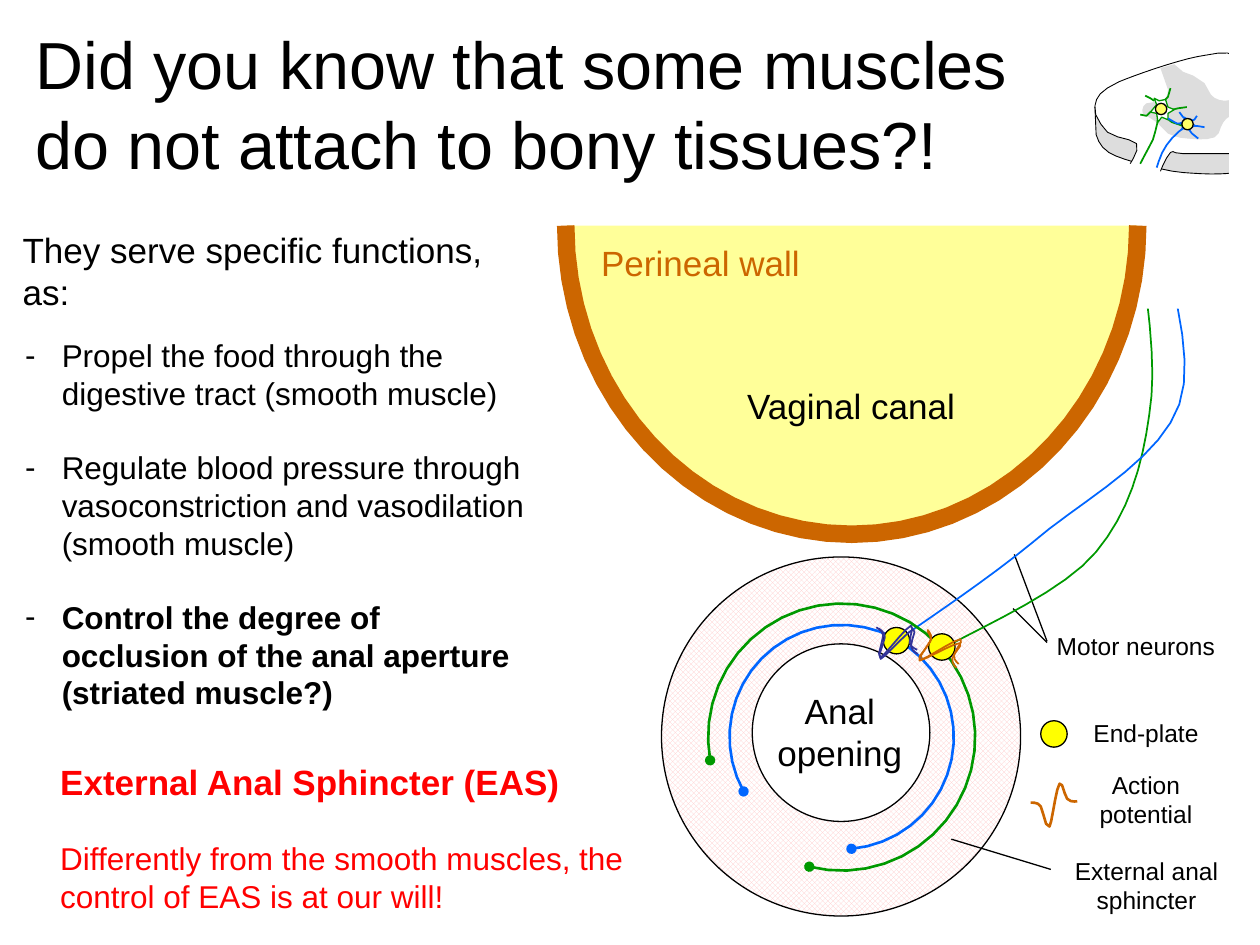
from math import cos, sin, radians, hypot
from pptx import Presentation
from pptx.util import Inches, Pt
from pptx.dml.color import RGBColor
from pptx.enum.dml import MSO_PATTERN
from pptx.enum.shapes import MSO_SHAPE as SHAPE, MSO_CONNECTOR as LINK
from pptx.enum.text import PP_ALIGN as ALIGN, MSO_ANCHOR as ANCHOR, MSO_AUTO_SIZE as AUTO
from pptx.oxml.ns import qn
from lxml.etree import SubElement

BLACK, WHITE, RED, GREY = "000000", "FFFFFF", "FF0000", "DDDDDD"
GREEN, BLUE, BROWN, PURPLE = "009900", "0066FF", "CC6600", "333399"
YELLOW, PALE, CREAM = "FFFF00", "FFFF66", "FFFF99"

TITLE = "Did you know that some muscles do not attach to bony tissues?!"
INTRO = "They serve specific functions, as:"
ROLES = [
    ("Propel the food through the digestive tract (smooth muscle)", False),
    ("Regulate blood pressure through vasoconstriction and vasodilation (smooth muscle)", False),
    ("Control the degree of occlusion of the anal aperture (striated muscle?)", True),
]
CLOSING = [
    ("External Anal Sphincter (EAS)", 20, True),
    ("Differently from the smooth muscles, the control of EAS is at our will!", 18, False),
]
KEYS = [
    ("Motor neurons", (8.34, 5.01, 1.35, 0.23)),
    ("End-plate", (8.42, 5.7, 1.35, 0.23)),
    ("Action potential", (8.5, 6.11, 1.19, 0.47)),
    ("External anal sphincter", (8.43, 6.79, 1.34, 0.47)),
]
LEADERS = [
    ((7.55, 6.66), (8.34, 6.9)),
    ((8.31, 5.09), (8.05, 4.4)),
    ((8.31, 5.1), (8.04, 4.83)),
]
NERVES = [
    (GREEN, [(8.99, 1.57), (9.02, 1.84, 9.18, 2.67, 9.14, 3.14),
             (9.09, 3.61, 8.99, 4.03, 8.7, 4.38), (8.42, 4.72, 7.68, 5.02, 7.41, 5.19)]),
    (BLUE, [(9.14, 1.61), (9.18, 1.88, 9.52, 2.76, 9.36, 3.21),
            (9.2, 3.66, 8.57, 3.98, 8.19, 4.31), (7.8, 4.63, 7.28, 4.97, 7.04, 5.14)]),
]
CORD = [
    (GREY, BLACK, [
        (9.08, 1.31), (8.98, 1.28, 8.86, 1.25, 8.8, 1.21), (8.74, 1.17, 8.72, 1.13, 8.7, 1.07),
        (8.69, 0.85), (8.75, 0.82), (8.89, 0.8), (9.02, 0.77, 9.42, 0.62, 9.57, 0.59),
        (9.72, 0.56, 9.74, 0.54, 9.79, 0.63), (9.86, 1.13), (9.86, 1.27),
        (9.84, 1.31, 9.87, 1.36, 9.79, 1.37), (9.71, 1.39, 9.51, 1.38, 9.39, 1.37),
        (9.27, 1.36, 9.18, 1.33, 9.08, 1.31)]),
    (WHITE, BLACK, [
        (8.97, 1.3), (8.98, 1.28, 9.05, 1.18, 9.02, 1.14), (8.99, 1.1, 8.85, 1.1, 8.79, 1.05),
        (8.74, 1, 8.67, 0.9, 8.69, 0.84), (8.7, 0.77, 8.73, 0.72, 8.88, 0.65),
        (9.02, 0.59, 9.4, 0.46, 9.56, 0.44), (9.72, 0.41, 9.79, 0.4, 9.85, 0.5),
        (9.87, 1.03), (9.85, 1.12), (9.83, 1.15, 9.86, 1.21, 9.78, 1.22), (9.39, 1.22),
        (9.3, 1.22, 9.32, 1.19, 9.29, 1.21), (9.26, 1.24, 9.22, 1.33, 9.21, 1.36)]),
    (GREY, None, [
        (9.87, 0.9), (9.79, 0.91), (9.76, 0.92, 9.73, 0.94, 9.71, 0.97),
        (9.68, 1, 9.69, 1.07, 9.64, 1.09), (9.6, 1.11, 9.5, 1.11, 9.43, 1.1),
        (9.37, 1.1, 9.31, 1.08, 9.27, 1.06), (9.18, 0.97), (9.07, 0.9),
        (9.06, 0.88, 9.07, 0.83, 9.1, 0.82), (9.23, 0.8), (9.26, 0.78, 9.27, 0.75, 9.27, 0.71),
        (9.21, 0.54), (9.32, 0.51), (9.39, 0.57), (9.47, 0.6), (9.56, 0.66), (9.61, 0.75),
        (9.63, 0.78, 9.68, 0.8, 9.72, 0.8), (9.88, 0.78), (9.87, 0.9)]),
]
CELLS = [
    {"color": GREEN, "body": (9.17, 0.82),
     "axon": [(9.19, 0.94), (9.19, 0.97, 9.17, 1.05, 9.15, 1.11), (9.12, 1.17, 9.07, 1.26, 9.05, 1.3)],
     "soma": [(9.27, 0.85), (9.25, 0.79), (9.2, 0.8), (9.16, 0.78), (9.18, 0.83), (9.13, 0.89),
              (9.18, 0.9), (9.19, 0.97), (9.22, 0.93), (9.27, 0.95), (9.27, 0.9), (9.32, 0.87),
              (9.27, 0.85)],
     "twigs": [[(9.16, 0.8), (9.13, 0.78), (9.09, 0.76)],
               [(9.24, 0.8), (9.27, 0.77), (9.29, 0.7)],
               [(9.31, 0.87), (9.35, 0.86), (9.42, 0.85)],
               [(9.25, 0.93), (9.3, 0.97), (9.39, 1)],
               [(9.13, 0.89), (9.1, 0.92), (9.05, 0.91)]]},
    {"color": BLUE, "body": (9.38, 0.94),
     "axon": [(9.4, 1.01), (9.37, 1.03, 9.29, 1.1, 9.26, 1.15), (9.22, 1.2, 9.19, 1.3, 9.18, 1.33)],
     "soma": [(9.46, 0.98), (9.46, 0.95), (9.43, 0.95), (9.4, 0.93), (9.41, 0.96), (9.36, 0.98),
              (9.39, 0.99), (9.38, 1.03), (9.41, 1.01), (9.44, 1.03), (9.45, 1.01), (9.49, 1),
              (9.46, 0.98)],
     "twigs": [[(9.41, 0.95), (9.39, 0.93), (9.36, 0.89)],
               [(9.45, 0.96), (9.48, 0.95), (9.5, 0.92)],
               [(9.48, 1), (9.5, 1), (9.56, 1.01)],
               [(9.43, 1.02), (9.46, 1.06), (9.51, 1.1)],
               [(9.36, 0.98), (9.34, 0.98), (9.27, 0.94)]]},
]
RINGS = [
    (BLUE, 0.89, 151, 445, (7.01, 4.98)),
    (GREEN, 1.06, 170, 464, (7.37, 5.03)),
]
WAVE = [(0.18, -0.03), (0.16, -0.03, 0.13, -0.02, 0.1, -0.05), (0.08, -0.07, 0.06, -0.2, 0.04, -0.17),
        (0.01, -0.13, -0.02, 0.14, -0.04, 0.17), (-0.07, 0.2, -0.09, 0.04, -0.11, 0.01),
        (-0.13, -0.02, -0.16, -0.02, -0.19, -0.02)]
SPIKES = [
    (7.46, 5.17, 53.3, BROWN),
    (7.47, 5.15, 49.4, BROWN),
    (7.12, 5.11, 34.7, PURPLE),
    (7.11, 5.09, 30.4, PURPLE),
]


def rgb(code):
    return RGBColor.from_string(code)


def style(shape, fill, line, width):
    shape.shadow.inherit = False
    if fill:
        shape.fill.solid()
        shape.fill.fore_color.rgb = rgb(fill)
    else:
        shape.fill.background()
    if line:
        shape.line.color.rgb = rgb(line)
        shape.line.width = Pt(width)
    else:
        shape.line.fill.background()
    return shape


def solid(kind, box, fill, line=BLACK, width=0.75):
    return style(shapes.add_shape(kind, *map(Inches, box)), fill, line, width)


def flatten(path):
    spots = [path[0]]
    for step in path[1:]:
        ends = spots[-1] + step
        reach = hypot(ends[-2] - ends[0], ends[-1] - ends[1])
        count = 1 if len(step) == 2 else max(3, min(9, round(reach * 14)))
        for n in range(1, count):
            t = n / count
            mix = ((1 - t) ** 3, 3 * t * (1 - t) ** 2, 3 * t * t * (1 - t), t ** 3)
            spots.append(tuple(sum(m * v for m, v in zip(mix, ends[k::2])) for k in (0, 1)))
        spots.append(step[-2:])
    return [(Inches(x), Inches(y)) for x, y in spots]


def trace(paths, line, width, fill=None):
    pen = None
    for path in paths:
        spots = flatten(path)
        if pen:
            pen.move_to(*spots[0])
        else:
            pen = shapes.build_freeform(*spots[0], scale=1.0)
        pen.add_line_segments(spots[1:], close=path[0] == path[-1])
    return style(pen.convert_to_shape(), fill, line, width)


def arc(x, y, wide, high, start, end):
    turns = [radians(start + (end - start) * n / 36) for n in range(37)]
    return [(x + wide * cos(a), y + high * sin(a)) for a in turns]


def wave(x, y, angle, color, width):
    path = [tuple(v + (x, y)[k % 2] for k, v in enumerate(step)) for step in WAVE]
    trace([path], color, width).rotation = angle


def write(shape, box, rows, color=BLACK, align=ALIGN.LEFT, inset=(0, 0), gap=0):
    shape.left, shape.top, shape.width, shape.height = map(Inches, box)
    frame = shape.text_frame
    frame.word_wrap = True
    frame.auto_size = AUTO.NONE
    frame.vertical_anchor = ANCHOR.TOP
    frame.margin_left = frame.margin_right = Inches(inset[0])
    frame.margin_top = frame.margin_bottom = Inches(inset[1])
    frame.text = "\n".join(row[0] for row in rows)
    for n, (para, (_, size, bold)) in enumerate(zip(frame.paragraphs, rows)):
        para.alignment = align
        para.line_spacing = 1.0
        para.space_before = Pt(gap if n else 0)
        font = para.runs[0].font
        font.name, font.size, font.bold = "Arial", Pt(size), bold
        font.color.rgb = rgb(color)
    return frame


def label(words, box, size=20, color=BLACK, align=ALIGN.CENTER, inset=(0, 0)):
    write(shapes.add_textbox(0, 0, 0, 0), box, [(words, size, False)], color, align, inset)


deck = Presentation()
deck.slide_width, deck.slide_height = Inches(10), Inches(7.5)
slide = deck.slides.add_slide(deck.slide_layouts[1])
shapes = slide.shapes
pad = (0.1, 0.05)

write(shapes.title, (0.18, 0.13, 8.27, 1.37), [(TITLE, 38, False)], inset=pad)
roles = write(slide.placeholders[1], (0.2, 2.67, 4.04, 3),
              [(words, 18, bold) for words, bold in ROLES], gap=20.7)
for para in roles.paragraphs:
    props = para._p.get_or_add_pPr()
    props.set("marL", str(Inches(0.29)))
    props.set("indent", str(Inches(-0.29)))
    SubElement(props, qn("a:buChar")).set("char", "-")
label(INTRO, (0.18, 1.81, 3.9, 0.67), align=ALIGN.LEFT)
write(shapes.add_textbox(0, 0, 0, 0), (0.38, 5.99, 5.33, 1.34), CLOSING, RED, inset=pad, gap=20.7)

muscle = solid(SHAPE.OVAL, (5.25, 4.42, 2.85, 2.85), WHITE)
muscle.fill.patterned()
muscle.fill.pattern = MSO_PATTERN.TRELLIS
muscle.fill.fore_color.rgb = rgb("FFCCCC")
muscle.fill.back_color.rgb = rgb(WHITE)
solid(SHAPE.OVAL, (5.97, 5.11, 1.41, 1.41), WHITE)
label("Anal opening", (6.11, 5.47, 1.11, 0.67))

for words, box in KEYS:
    label(words, box, 14)
for start, end in LEADERS:
    link = shapes.add_connector(LINK.STRAIGHT, *map(Inches, start + end))
    link.line.color.rgb = rgb(BLACK)
    link.line.width = Pt(0.75)
    SubElement(link._element.spPr, qn("a:effectLst"))
solid(SHAPE.OVAL, (8.26, 5.72, 0.21, 0.21), YELLOW)
wave(8.37, 6.39, 0, BROWN, 1.5)

for color, path in NERVES:
    trace([path], color, 1)
for fill, line, path in CORD:
    trace([path], line, 0.5, fill)
for cell in CELLS:
    trace([cell["axon"]] + cell["twigs"], cell["color"], 1)
    trace([cell["soma"]], cell["color"], 0.75, WHITE)
    solid(SHAPE.OVAL, cell["body"] + (0.09, 0.09), PALE)
solid(SHAPE.RECTANGLE, (9.76, 0.32, 0.24, 1.18), WHITE, WHITE, 1)
solid(SHAPE.RECTANGLE, (8.89, 1.53, 0.68, 0.92), WHITE, None)

trace([arc(6.76, 1.79, 2.27, 2.45, 180, 0)], BROWN, 10, CREAM)
label("Vaginal canal", (5.69, 3, 2.13, 0.43), inset=pad)
label("Perineal wall", (4.34, 1.87, 2.44, 0.43), color=BROWN, inset=pad)

for color, radius, start, end, plate in RINGS:
    ring = trace([arc(6.68, 5.85, radius, radius, start, end)], color, 1.5)
    for tip in ("a:headEnd", "a:tailEnd"):
        SubElement(ring.line._get_or_add_ln(), qn(tip)).set("type", "oval")
    solid(SHAPE.OVAL, plate + (0.21, 0.21), YELLOW)
for x, y, angle, color in SPIKES:
    wave(x, y, angle, color, 1)

deck.save("out.pptx")
